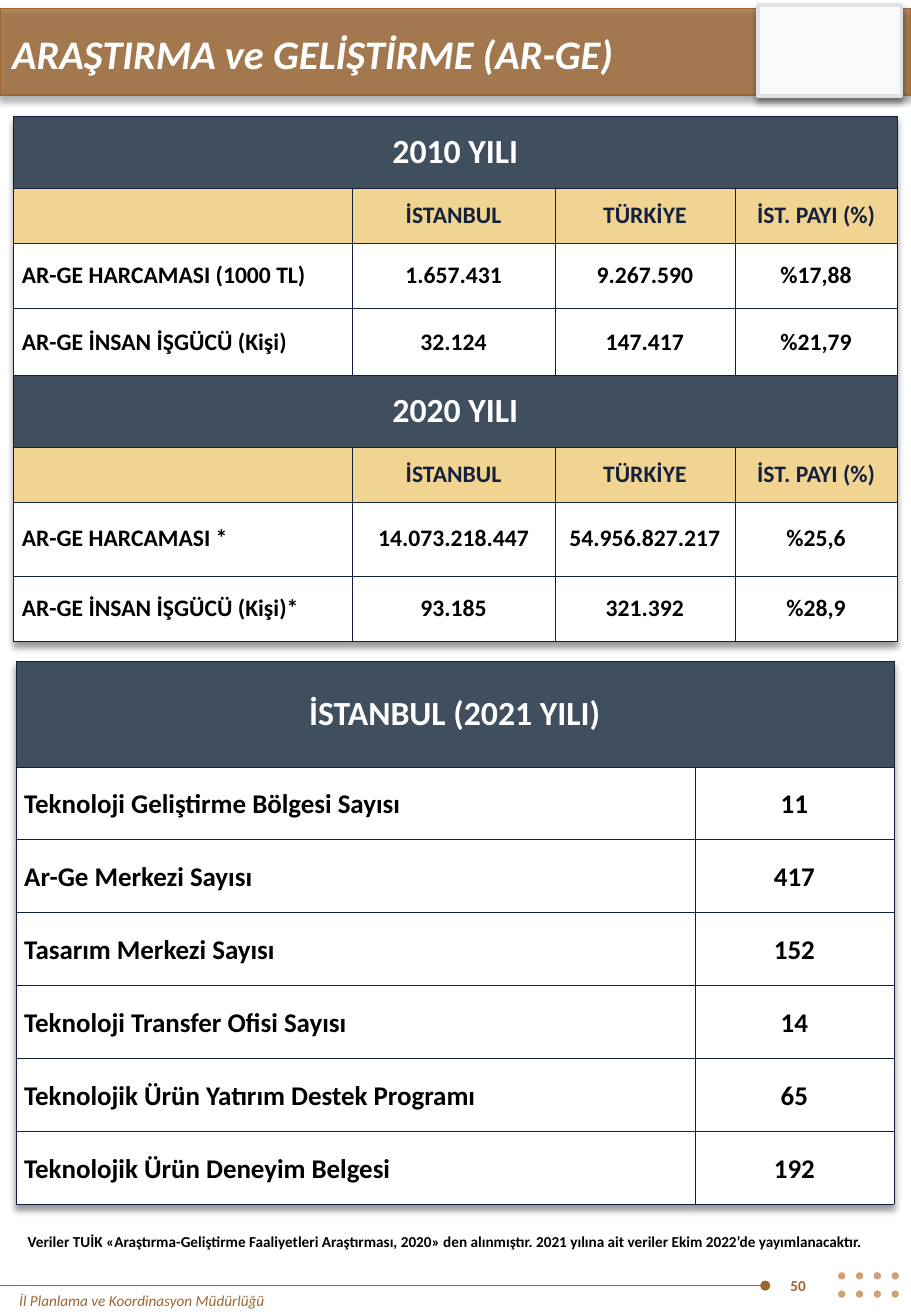
from dataclasses import dataclass

import lxml.etree
import pptx
import pptx.dml.color
import pptx.enum.shapes
import pptx.enum.text
import pptx.oxml
import pptx.oxml.ns
import pptx.shapes.autoshape
import pptx.slide
import pptx.table
import pptx.text.text
import pptx.util
from pptx.util import Inches

RGBColor = pptx.dml.color.RGBColor
Shape = pptx.enum.shapes.MSO_SHAPE
Align = pptx.enum.text.PP_ALIGN
Anchor = pptx.enum.text.MSO_ANCHOR
qn = pptx.oxml.ns.qn

BROWN = RGBColor(0x9E, 0x65, 0x2E)
TAN = RGBColor(0xCD, 0xA0, 0x77)
PALE = RGBColor(0xF8, 0xF9, 0xFA)
PALE_EDGE = RGBColor(0xDE, 0xE2, 0xE6)
SLATE = RGBColor(0x40, 0x4F, 0x5D)
SAND = RGBColor(0xF2, 0xD4, 0x92)
NAVY = RGBColor(0x14, 0x21, 0x3D)
WHITE = RGBColor(0xFF, 0xFF, 0xFF)
BLACK = RGBColor(0, 0, 0)

DRAWING = "http://schemas.openxmlformats.org/drawingml/2006/main"
SHADOW = (
    f'<a:effectLst xmlns:a="{DRAWING}"><a:outerShdw blurRad="50800" dist="38100" '
    'dir="5400000" algn="t" rotWithShape="0"><a:srgbClr val="000000">'
    '<a:alpha val="40000"/></a:srgbClr></a:outerShdw></a:effectLst>'
)


@dataclass(frozen=True)
class TextStyle:
    size: float
    color: RGBColor
    bold: bool = True
    italic: bool = False


@dataclass(frozen=True)
class Row:
    """One table row; a single text spans the whole width."""
    height: float
    texts: tuple[str, ...]
    fill: RGBColor
    style: TextStyle


@dataclass(frozen=True)
class TableLayout:
    left: float
    top: float
    widths: tuple[float, ...]
    rows: tuple[Row, ...]
    body_margin: float
    body_spacing: float
    space_after: float


YEAR = TextStyle(20, WHITE)
HEADING = TextStyle(14, NAVY)
FIGURE = TextStyle(14, BLACK)
COUNT = TextStyle(16, BLACK)
COLUMN_NAMES = ("", "İSTANBUL", "TÜRKİYE", "İST. PAYI (%)")
CENTERS = (
    ("Teknoloji Geliştirme Bölgesi Sayısı", "11"),
    ("Ar-Ge Merkezi Sayısı", "417"),
    ("Tasarım Merkezi Sayısı", "152"),
    ("Teknoloji Transfer Ofisi Sayısı", "14"),
    ("Teknolojik Ürün Yatırım Destek Programı", "65"),
    ("Teknolojik Ürün Deneyim Belgesi", "192"),
)


def year_rows(year: str, *figures: tuple[float, tuple[str, ...]]) -> tuple[Row, ...]:
    return (
        Row(0.59, (year,), SLATE, YEAR),
        Row(0.45, COLUMN_NAMES, SAND, HEADING),
        *(Row(height, texts, WHITE, FIGURE) for height, texts in figures),
    )


TABLES = (
    TableLayout(0.11, 0.96, (2.79, 1.67, 1.48, 1.34), (
        *year_rows(
            "2010 YILI",
            (0.54, ("AR-GE HARCAMASI (1000 TL)", "1.657.431", "9.267.590", "%17,88")),
            (0.55, ("AR-GE İNSAN İŞGÜCÜ (Kişi)", "32.124", "147.417", "%21,79")),
        ),
        *year_rows(
            "2020 YILI",
            (0.61, ("AR-GE HARCAMASI *", "14.073.218.447", "54.956.827.217", "%25,6")),
            (0.54, ("AR-GE İNSAN İŞGÜCÜ (Kişi)*", "93.185", "321.392", "%28,9")),
        ),
    ), 0.04, 1.0, 0),
    TableLayout(0.13, 5.44, (5.59, 1.64), (
        Row(0.87, ("İSTANBUL (2021 YILI)",), SLATE, YEAR),
        *(Row(0.6, texts, WHITE, COUNT) for texts in CENTERS),
    ), 0, 1.07, 8),
)


def add_run(paragraph: pptx.text.text._Paragraph, text: str, style: TextStyle) -> None:
    run = paragraph.add_run()
    run.text = text
    run.font.name = "Calibri"
    run.font.size = pptx.util.Pt(style.size)
    run.font.bold = style.bold
    run.font.italic = style.italic
    run.font.color.rgb = style.color


def add_text(slide: pptx.slide.Slide, left: float, top: float, width: float,
             height: float, text: str, style: TextStyle, wrap: bool = True) -> None:
    frame = slide.shapes.add_textbox(
        Inches(left), Inches(top), Inches(width), Inches(height)).text_frame
    frame.word_wrap = wrap
    frame.vertical_anchor = Anchor.MIDDLE
    add_run(frame.paragraphs[0], text, style)


def add_plain_shape(slide: pptx.slide.Slide, kind: Shape, left: float, top: float,
                    width: float, height: float,
                    fill: RGBColor) -> pptx.shapes.autoshape.Shape:
    shape = slide.shapes.add_shape(
        kind, Inches(left), Inches(top), Inches(width), Inches(height))
    shape.shadow.inherit = False
    shape.fill.solid()
    shape.fill.fore_color.rgb = fill
    shape.line.fill.background()
    return shape


def add_panel(slide: pptx.slide.Slide, left: float, top: float, width: float,
              height: float, fill: RGBColor, edge: RGBColor,
              edge_width: float) -> pptx.shapes.autoshape.Shape:
    """Add an outlined rectangle that casts a shadow."""
    panel = add_plain_shape(slide, Shape.RECTANGLE, left, top, width, height, fill)
    panel.line.color.rgb = edge
    panel.line.width = pptx.util.Pt(edge_width)
    properties = panel.element.spPr
    properties.replace(properties.find(qn("a:effectLst")), pptx.oxml.parse_xml(SHADOW))
    return panel


def format_cell(cell: pptx.table._Cell, fill: RGBColor, margin: float) -> None:
    properties = cell._tc.get_or_add_tcPr()
    for side in ("lnL", "lnR", "lnT", "lnB"):
        properties.append(pptx.oxml.parse_xml(
            f'<a:{side} xmlns:a="{DRAWING}" w="3175"><a:solidFill>'
            f'<a:srgbClr val="{NAVY}"/></a:solidFill></a:{side}>'))
    cell.fill.solid()
    cell.fill.fore_color.rgb = fill
    cell.vertical_anchor = Anchor.MIDDLE
    cell.margin_left = cell.margin_right = Inches(0.07)
    cell.margin_top = cell.margin_bottom = Inches(margin)


def add_data_table(slide: pptx.slide.Slide, layout: TableLayout) -> None:
    table = slide.shapes.add_table(
        len(layout.rows), len(layout.widths), Inches(layout.left), Inches(layout.top),
        Inches(sum(layout.widths)), Inches(sum(row.height for row in layout.rows))).table
    table.first_row = table.horz_banding = False
    table._tbl.tblPr.insert(0, pptx.oxml.parse_xml(SHADOW))
    for column, width in zip(table.columns, layout.widths):
        column.width = Inches(width)
    for index, row in enumerate(layout.rows):
        table.rows[index].height = Inches(row.height)
        is_body = row.fill == WHITE
        for cell in table.rows[index].cells:
            format_cell(cell, row.fill, layout.body_margin if is_body else 0.04)
        if len(row.texts) == 1:
            table.cell(index, 0).merge(table.cell(index, len(layout.widths) - 1))
        for column, text in enumerate(row.texts):
            if not text:
                continue
            paragraph = table.cell(index, column).text_frame.paragraphs[0]
            paragraph.alignment = Align.LEFT if is_body and column == 0 else Align.CENTER
            if is_body:
                paragraph.line_spacing = layout.body_spacing
                paragraph.space_after = pptx.util.Pt(layout.space_after)
            add_run(paragraph, text, row.style)


def add_header(slide: pptx.slide.Slide) -> None:
    band = add_panel(slide, 0, 0.07, 7.5, 0.71, BROWN, BROWN, 1)
    color = band.element.spPr.find(qn("a:solidFill")).find(qn("a:srgbClr"))
    lxml.etree.SubElement(color, qn("a:alpha"), val="75000")
    add_panel(slide, 6.24, 0.04, 1.18, 0.75, PALE, PALE_EDGE, 2)
    title = slide.shapes.title
    slide.shapes.element.append(title.element)
    title.left, title.top, title.width, title.height = map(Inches, (0, 0.19, 7.5, 0.5))
    title.text_frame.word_wrap = True
    title.text_frame.auto_size = pptx.enum.text.MSO_AUTO_SIZE.NONE
    title.text_frame.vertical_anchor = Anchor.MIDDLE
    paragraph = title.text_frame.paragraphs[0]
    paragraph.alignment = Align.LEFT
    add_run(paragraph, "ARAŞTIRMA ve GELİŞTİRME (AR-GE)", TextStyle(24, WHITE, italic=True))


def add_footer(slide: pptx.slide.Slide) -> None:
    rule = slide.shapes.add_connector(
        pptx.enum.shapes.MSO_CONNECTOR.STRAIGHT,
        Inches(6.3), Inches(10.58), Inches(0), Inches(10.58))
    rule.line.color.rgb = BROWN
    rule.line.width = pptx.util.Pt(0.5)
    lxml.etree.SubElement(rule.line._get_or_add_ln(), qn("a:headEnd"), type="oval")
    lxml.etree.SubElement(rule.element.spPr, qn("a:effectLst"))
    for column in range(4):
        for top in (10.47, 10.62):
            add_plain_shape(slide, Shape.OVAL, 6.9 + column * 0.44 / 3, top, 0.06, 0.06, TAN)
    add_text(slide, 0.06, 10.58, 4.69, 0.25, "İl Planlama ve Koordinasyon Müdürlüğü",
             TextStyle(9, BROWN, bold=False, italic=True))
    add_text(slide, 6.41, 10.37, 0.5, 0.42, "50", TextStyle(9, BROWN))
    add_text(slide, 0.13, 10.09, 7.25, 0.25,
             "Veriler TUİK «Araştırma-Geliştirme Faaliyetleri Araştırması, 2020» den alınmıştır. "
             "2021 yılına ait veriler Ekim 2022’de yayımlanacaktır.",
             TextStyle(9, BLACK), wrap=False)


def main() -> None:
    presentation = pptx.Presentation()
    presentation.slide_width, presentation.slide_height = Inches(7.5), Inches(10.83)
    slide = presentation.slides.add_slide(presentation.slide_layouts.get_by_name("Title Only"))
    add_header(slide)
    for layout in TABLES:
        add_data_table(slide, layout)
    add_footer(slide)
    presentation.save("out.pptx")


if __name__ == "__main__":
    main()
